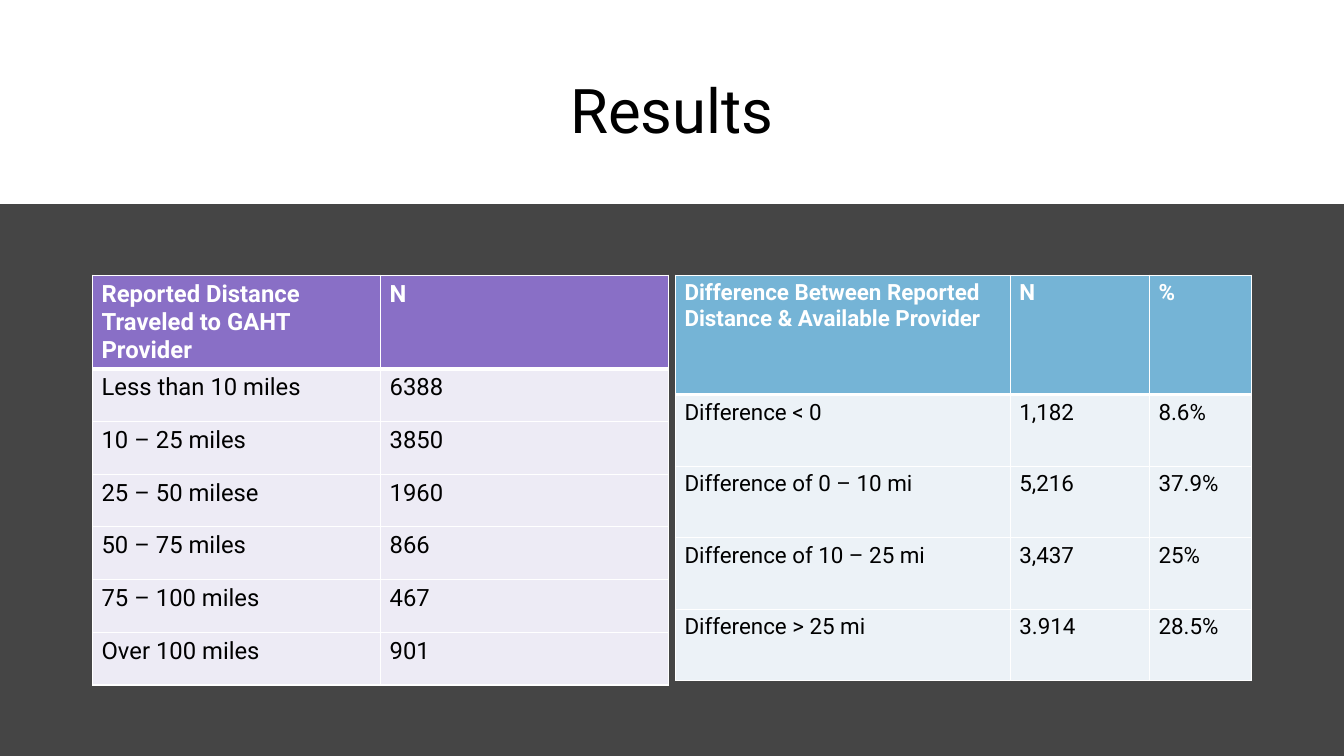
import pptx
import pptx.util
import pptx.dml.color
import pptx.enum.shapes
import pptx.enum.text
import pptx.oxml
import pptx.oxml.ns

Pt = pptx.util.Pt
FONT = "Roboto"
COLORS = {
    "white": "FFFFFF",
    "black": "000000",
    "back": "454545",
    "purple": "896FC6",
    "lilac": "EDEBF5",
    "blue": "75B4D6",
    "pale": "ECF2F7",
}
TRAVEL = [
    ["Reported Distance Traveled to GAHT Provider", "N"],
    ["Less than 10 miles", "6388"],
    ["10 – 25 miles", "3850"],
    ["25 – 50 milese", "1960"],
    ["50 – 75 miles", "866"],
    ["75 – 100 miles", "467"],
    ["Over 100 miles", "901"],
]
GAPS = [
    ["Difference Between Reported Distance & Available Provider", "N", "%"],
    ["Difference < 0", "1,182", "8.6%"],
    ["Difference of 0 – 10 mi", "5,216", "37.9%"],
    ["Difference of 10 – 25 mi", "3,437", "25%"],
    ["Difference > 25 mi", "3.914", "28.5%"],
]


def paint(fill, name):
    fill.solid()
    fill.fore_color.rgb = pptx.dml.color.RGBColor.from_string(COLORS[name])


def write(frame, text, size, color="black", bold=False, align="LEFT", space=1.0):
    frame.word_wrap = True
    para = frame.paragraphs[0]
    para.alignment = getattr(pptx.enum.text.PP_ALIGN, align)
    para.line_spacing = space
    run = para.add_run()
    run.text = text
    run.font.name = FONT
    run.font.size = Pt(size)
    run.font.bold = bold
    paint(run.font.fill, color)


def border(cell, row):
    props = cell._tc.get_or_add_tcPr()
    widths = {"L": 1, "R": 1, "T": 3 if row == 1 else 1, "B": 3 if row == 0 else 1}
    for side, width in widths.items():
        props.append(pptx.oxml.parse_xml(
            f'<a:ln{side} {pptx.oxml.ns.nsdecls("a")} w="{Pt(width)}">'
            f'<a:solidFill><a:srgbClr val="{COLORS["white"]}"/></a:solidFill>'
            f'</a:ln{side}>'))


def header(slide, left, top, width, height):
    band = slide.shapes.add_shape(
        pptx.enum.shapes.MSO_SHAPE.RECTANGLE,
        Pt(left), Pt(top), Pt(width), Pt(height))
    band.shadow.inherit = False
    paint(band.fill, "white")
    band.line.fill.background()
    title = slide.shapes.title
    title._element.addprevious(band._element)
    title.left, title.top = Pt(left + 66), Pt(top + 29.25)
    title.width, title.height = Pt(width - 132), Pt(104.4)
    title.text_frame.vertical_anchor = pptx.enum.text.MSO_ANCHOR.MIDDLE
    write(title.text_frame, "Results", 44, align="CENTER", space=0.9)


def grid(slide, left, top, cols, first, rest, data, size, head, body):
    heights = [first] + [rest] * (len(data) - 1)
    table = slide.shapes.add_table(
        len(data), len(cols), Pt(left), Pt(top),
        Pt(sum(cols)), Pt(sum(heights))).table
    for col, width in zip(table.columns, cols):
        col.width = Pt(width)
    for row, (height, texts) in enumerate(zip(heights, data)):
        table.rows[row].height = Pt(height)
        is_head = row == 0
        for col, text in enumerate(texts):
            cell = table.cell(row, col)
            cell.margin_left = cell.margin_right = Pt(6.6)
            cell.margin_top = cell.margin_bottom = Pt(3.4)
            border(cell, row)
            paint(cell.fill, head if is_head else body)
            write(cell.text_frame, text, size, bold=is_head,
                  color="white" if is_head else "black")


def main():
    deck = pptx.Presentation()
    deck.slide_width, deck.slide_height = Pt(960), Pt(540)
    slide = deck.slides.add_slide(deck.slide_layouts[5])
    paint(slide.background.fill, "back")
    header(slide, 0, -0.5, 960, 146.2)
    grid(slide, 66, 196.5, [205.8, 205.8], 66.6, 37.65, TRAVEL, 17, "purple", "lilac")
    grid(slide, 482.4, 196.5, [239.2, 99.4, 73], 85.4, 51.1, GAPS, 16, "blue", "pale")
    deck.save("out.pptx")


if __name__ == "__main__":
    main()
